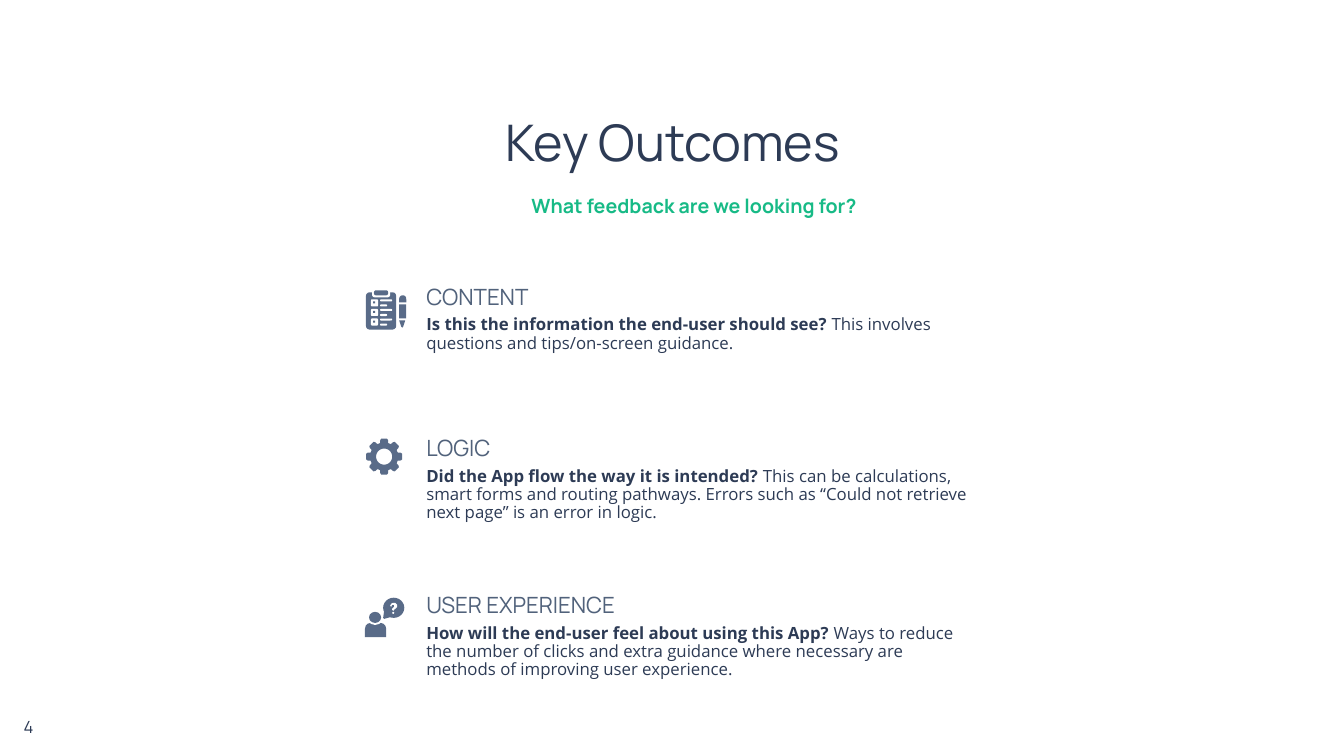
"""Build the Key Outcomes slide."""
from math import cos, radians, sin

from pptx import Presentation
from pptx.dml.color import RGBColor
from pptx.enum.shapes import MSO_SHAPE
from pptx.enum.text import MSO_ANCHOR, PP_ALIGN
from pptx.util import Inches, Pt

HEX = {"navy": "2D3B55", "green": "17BA86", "slate": "51627B",
       "icon": "596B88", "white": "FFFFFF"}
FONT = {
    "title": ({"name": "Manrope", "size": Pt(36), "bold": False}, "navy"),
    "lead": ({"name": "Manrope", "size": Pt(14), "bold": True}, "green"),
    "page": ({"name": "Manrope", "size": Pt(12), "bold": False}, "navy"),
    "head": ({"name": "Manrope", "size": Pt(16), "bold": False}, "slate"),
    "ask": ({"name": "Open Sans", "size": Pt(12), "bold": True}, "navy"),
    "body": ({"name": "Open Sans", "size": Pt(12), "bold": False}, "navy"),
}
LABELS = [
    ("title", "Key Outcomes", (0.92, 1.09, 11.5, 0.69)),
    ("page", "4", (0, 6.95, 0.57, 0.55)),
    ("lead", "What feedback are we looking for?", (4.5, 1.86, 4.77, 0.39)),
]
TOPICS = [
    (2.79, "CONTENT", "Is this the information the end-user should see? ",
     "This involves questions and tips/on-screen guidance."),
    (4.29, "LOGIC", "Did the App flow the way it is intended? ",
     "This can be calculations, smart forms and routing pathways. Errors such "
     "as “Could not retrieve next page” is an error in logic."),
    (5.85, "USER EXPERIENCE", "How will the end-user feel about using this App? ",
     "Ways to reduce the number of clicks and extra guidance where necessary "
     "are methods of improving user experience."),
]
NIB = [(3.96, 3.18), (4.02, 3.18), (4, 3.24), (3.99, 3.25), (3.98, 3.24)]
TAIL = [(3.81, 6.06), (3.8, 6.13), (3.81, 6.14), (3.88, 6.12)]
HOOK = [(3.87, 6.01), (3.88, 5.99), (3.9, 5.98), (3.92, 5.98), (3.94, 6),
        (3.94, 6.02), (3.92, 6.04), (3.91, 6.05), (3.9, 6.06), (3.89, 6.05),
        (3.89, 6.04), (3.91, 6.02), (3.91, 6), (3.89, 6), (3.88, 6.02)]


def paint(shape, color):
    """Give a shape a flat fill with no line or shadow."""
    shape.shadow.inherit = False
    shape.fill.solid()
    shape.fill.fore_color.rgb = RGBColor.from_string(HEX[color])
    shape.line.fill.background()


def block(shapes, kind, box, color="icon", curve=None):
    """Add a preset shape."""
    shape = shapes.add_shape(kind, *map(Inches, box))
    if curve is not None:
        shape.adjustments[0] = curve
    paint(shape, color)


def trace(shapes, loops, color="icon"):
    """Add one outline made of closed loops."""
    loops = [[(Inches(x), Inches(y)) for x, y in loop] for loop in loops]
    pen = shapes.build_freeform(*loops[0][0])
    for num, loop in enumerate(loops):
        if num:
            pen.move_to(*loop[0])
        pen.add_line_segments(loop[1:], close=True)
    paint(pen.convert_to_shape(), color)


def write(shapes, box, runs, center=False):
    """Add a text box with styled runs."""
    frame = shapes.add_textbox(*map(Inches, box)).text_frame
    frame.word_wrap = True
    frame.vertical_anchor = MSO_ANCHOR.MIDDLE if center else MSO_ANCHOR.TOP
    para = frame.paragraphs[0]
    para.alignment = PP_ALIGN.CENTER if center else PP_ALIGN.LEFT
    para.line_spacing = 0.9
    for style, text in runs:
        run = para.add_run()
        run.text = text
        form, color = FONT[style]
        for key, value in form.items():
            setattr(run.font, key, value)
        run.font.color.rgb = RGBColor.from_string(HEX[color])


def draw_list(shapes):
    """Draw the checklist and pen."""
    soft = MSO_SHAPE.ROUNDED_RECTANGLE
    block(shapes, soft, (3.63, 2.9, 0.3, 0.37), curve=0.12)
    block(shapes, soft, (3.69, 2.88, 0.18, 0.07), "white", 0.35)
    block(shapes, soft, (3.71, 2.88, 0.14, 0.05), curve=0.4)
    for row in range(3):
        top = 2.97 + row * 0.095
        block(shapes, soft, (3.68, top, 0.07, 0.07), "white", 0.15)
        block(shapes, MSO_SHAPE.RECTANGLE, (3.7, top + 0.02, 0.02, 0.02))
        for drop, wide in ((0, 0.12), (0.05, 0.07)):
            block(shapes, soft, (3.77, top + drop, wide, 0.02), "white", 0.5)
    block(shapes, MSO_SHAPE.ROUND_2_SAME_RECTANGLE, (3.96, 2.93, 0.07, 0.07), curve=0.45)
    block(shapes, MSO_SHAPE.RECTANGLE, (3.96, 3.02, 0.07, 0.14))
    trace(shapes, [NIB])


def draw_gear(shapes):
    """Draw the gear with its round hole."""
    def spot(turn, far):
        return 3.81 + far * sin(radians(turn)), 4.53 - far * cos(radians(turn))

    tooth = [(-17, 0.14), (-13, 0.17), (-9, 0.18), (9, 0.18), (13, 0.17), (17, 0.14)]
    rim = [spot(base + turn, far) for base in range(0, 360, 45) for turn, far in tooth]
    hole = [spot(-turn, 0.08) for turn in range(0, 360, 10)]
    trace(shapes, [rim, hole])


def draw_user(shapes):
    """Draw the person with a question bubble."""
    block(shapes, MSO_SHAPE.ROUND_2_SAME_RECTANGLE, (3.62, 6.18, 0.21, 0.14), curve=0.4)
    block(shapes, MSO_SHAPE.OVAL, (3.64, 6.05, 0.16, 0.15), "white")
    block(shapes, MSO_SHAPE.OVAL, (3.66, 6.07, 0.12, 0.11))
    block(shapes, MSO_SHAPE.OVAL, (3.8, 5.93, 0.21, 0.2))
    trace(shapes, [TAIL])
    trace(shapes, [HOOK], "white")
    block(shapes, MSO_SHAPE.OVAL, (3.89, 6.07, 0.02, 0.02), "white")


def main():
    """Lay out and save the slide."""
    deck = Presentation()
    deck.slide_width, deck.slide_height = Inches(13.33), Inches(7.5)
    slide = deck.slides.add_slide(deck.slide_layouts[6])
    for style, text, box in LABELS:
        write(slide.shapes, box, [(style, text)], True)
    for (top, head, ask, body), draw in zip(TOPICS, (draw_list, draw_gear, draw_user)):
        shapes = slide.shapes.add_group_shape().shapes
        write(shapes, (4.13, top, 4.47, 0.88), [("head", head)])
        write(shapes, (4.13, top + 0.3, 5.57, 0.58), [("ask", ask), ("body", body)])
        draw(shapes)
    deck.save("out.pptx")


if __name__ == "__main__":
    main()
